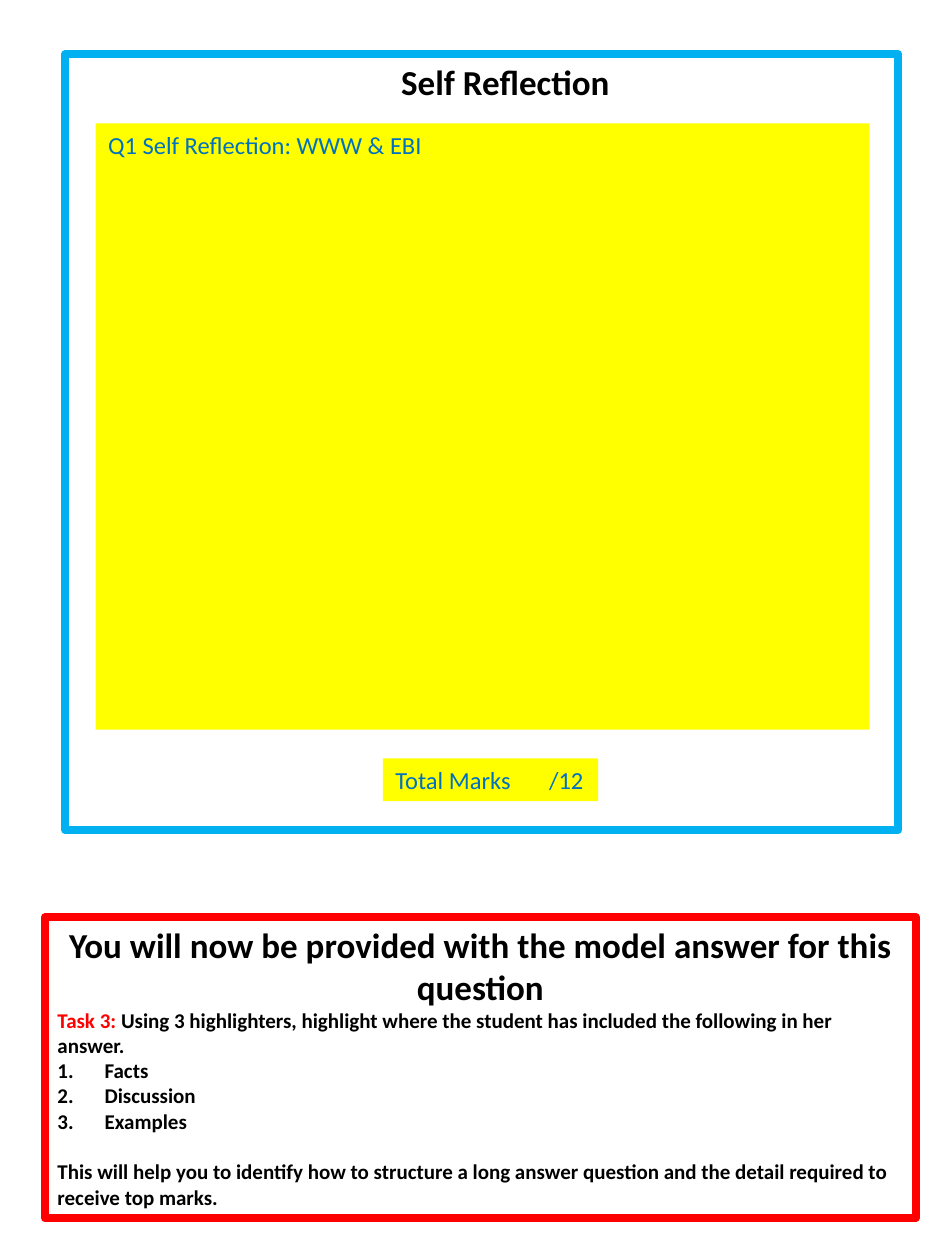
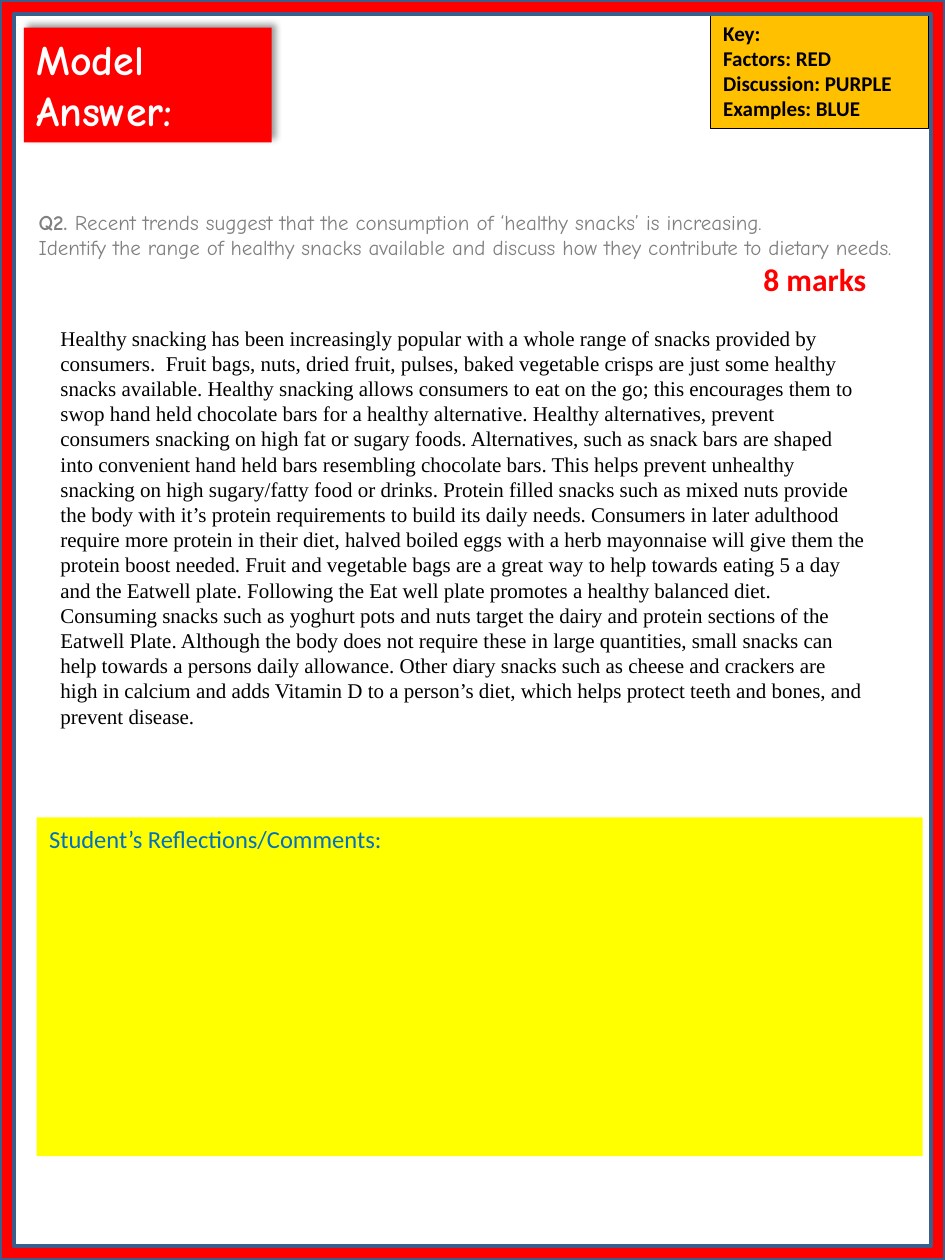
"""Build a self-reflection page and a model-answer page for a student workbook."""
from lxml.etree import SubElement
from pptx import Presentation
from pptx.dml.color import RGBColor
from pptx.enum.shapes import MSO_SHAPE as Shape
from pptx.enum.text import MSO_ANCHOR as Anchor, MSO_AUTO_SIZE as AutoSize, PP_ALIGN as Align
from pptx.oxml.ns import qn
from pptx.util import Cm, Pt

COLOURS = {
    "black": "000000", "white": "FFFFFF", "red": "FF0000", "yellow": "FFFF00",
    "amber": "FFC000", "sky": "00B0F0", "blue": "0070C0", "navy": "3A5F8C", "grey": "808080",
}

STYLES = {
    "title": {"name": "Calibri", "size": Pt(20), "bold": True, "color": "black"},
    "task": {"name": "Calibri", "size": Pt(12), "bold": True, "color": "black"},
    "task_label": {"name": "Calibri", "size": Pt(12), "bold": True, "color": "red"},
    "response": {"name": "Calibri", "size": Pt(14), "bold": False, "color": "blue"},
    "marks": {"name": "Calibri", "size": Pt(18), "bold": True, "color": "red"},
    "banner": {"name": "Comic Neue", "size": Pt(24), "bold": True, "color": "white"},
    "question": {"name": "Comic Neue", "size": Pt(12), "bold": False, "color": "grey"},
    "question_label": {"name": "Comic Neue", "size": Pt(12), "bold": True, "color": "grey"},
    "answer": {"name": "Times New Roman", "size": Pt(12), "bold": False, "color": "black"},
}

MODEL_ANSWER = (
    "Healthy snacking has been increasingly popular with a whole range of snacks provided by",
    "consumers.  Fruit bags, nuts, dried fruit, pulses, baked vegetable crisps are just some",
    "healthy snacks available. Healthy snacking allows consumers to eat on the go; this",
    "encourages them to swop hand held chocolate bars for a healthy alternative. Healthy",
    "alternatives, prevent consumers snacking on high fat or sugary foods. Alternatives, such as",
    "snack bars are shaped into convenient hand held bars resembling chocolate bars. This helps",
    "prevent unhealthy snacking on high sugary/fatty food or drinks. Protein filled snacks such",
    "as mixed nuts provide the body with it’s protein requirements to build its daily needs.",
    "Consumers in later adulthood require more protein in their diet, halved boiled eggs with a",
    "herb mayonnaise will give them the protein boost needed. Fruit and vegetable bags are a",
    "great way to help towards eating 5 a day and the Eatwell plate. Following the Eat well plate",
    "promotes a healthy balanced diet. Consuming snacks such as yoghurt pots and nuts target the",
    "dairy and protein sections of the Eatwell Plate. Although the body does not require these in",
    "large quantities, small snacks can help towards a persons daily allowance. Other diary",
    "snacks such as cheese and crackers are high in calcium and adds Vitamin D to a person’s",
    "diet, which helps protect teeth and bones, and prevent disease.",
)


def colour(name):
    """Return the named colour."""
    return RGBColor.from_string(COLOURS[name])


def paragraph(*spans, **layout):
    """Describe a paragraph by its (text, style) spans and its layout."""
    return spans, layout


def add_span(para, text, style):
    """Add a run of text in the named style."""
    span = para.add_run()
    span.text = text
    for name, value in STYLES[style].items():
        if name == "color":
            span.font.color.rgb = colour(value)
        else:
            setattr(span.font, name, value)


def number(para):
    """Give a paragraph an automatic number and a hanging indent."""
    properties = para._p.get_or_add_pPr()
    properties.set("marL", str(Cm(0.95)))
    properties.set("indent", str(-Cm(0.95)))
    SubElement(properties, qn("a:buAutoNum"), type="arabicPeriod")


def add_tab_stop(para, position):
    """Set a left tab stop in a paragraph."""
    stops = SubElement(para._p.get_or_add_pPr(), qn("a:tabLst"))
    SubElement(stops, qn("a:tab"), pos=str(position), algn="l")


def write(box, paragraphs):
    """Fill a box with wrapped paragraphs from its top."""
    frame = box.text_frame
    settings = {"word_wrap": True, "auto_size": AutoSize.NONE, "vertical_anchor": Anchor.TOP}
    for name, value in settings.items():
        setattr(frame, name, value)
    for index, (spans, layout) in enumerate(paragraphs):
        para = frame.add_paragraph() if index else frame.paragraphs[0]
        para.alignment = layout.get("align", Align.LEFT)
        para.space_before = layout.get("before", Pt(0))
        if layout.get("numbered"):
            number(para)
        if "tab" in layout:
            add_tab_stop(para, layout["tab"])
        for text, style in spans:
            add_span(para, text, style)


def add_panel(page, place, paragraphs=(), fill=None, line=None, width=4.5, kind=Shape.RECTANGLE):
    """Add a shape with optional fill, outline and text."""
    box = page.shapes.add_shape(kind, *map(Cm, place))
    box.shadow.inherit = False
    if fill:
        box.fill.solid()
        box.fill.fore_color.rgb = colour(fill)
    else:
        box.fill.background()
    if line:
        box.line.color.rgb = colour(line)
        box.line.width = Pt(width)
    else:
        box.line.fill.background()
    write(box, paragraphs)
    return box


def add_response(page, place, prompt, **layout):
    """Add a yellow area for the student to fill in."""
    add_panel(page, place, [paragraph((prompt, "response"), **layout)], fill="yellow")


def add_note(page, place, *paragraphs):
    """Add a plain text box."""
    write(page.shapes.add_textbox(*map(Cm, place)), paragraphs)


def cast_shadow(box):
    """Cast a soft shadow to the upper right of a box."""
    effects = box._element.spPr.find(qn("a:effectLst"))
    shadow = SubElement(effects, qn("a:outerShdw"), blurRad=str(Pt(4)), dist=str(Pt(3)),
                        dir=str(315 * 60000), algn="bl", rotWithShape="0")
    tint = SubElement(shadow, qn("a:srgbClr"), val=COLOURS["black"])
    SubElement(tint, qn("a:alpha"), val="40000")


def build_reflection(page):
    """Lay out the self-reflection page."""
    title = paragraph(("Self Reflection", "title"), align=Align.CENTER)
    frame = add_panel(page, (1.32, 1.09, 16.79, 15.65), [title], line="sky")
    frame.text_frame.margin_left = Cm(1.2)
    add_response(page, (1.93, 2.49, 15.6, 12.22), "Q1 Self Reflection: WWW & EBI")
    add_response(page, (7.72, 15.29, 4.34, 0.86), "Total Marks\t/12", tab=Cm(3.1))
    steps = [paragraph((step, "task"), numbered=True)
             for step in ("Facts", "Discussion", "Examples")]
    add_panel(page, (0.91, 18.49, 17.55, 6.07), [
        paragraph(("You will now be provided with the model answer for this question", "title"),
                  align=Align.CENTER),
        paragraph(("Task 3: ", "task_label"),
                  ("Using 3 highlighters, highlight where the student has included the "
                   "following in her answer.", "task")),
        *steps,
        paragraph(("This will help you to identify how to structure a long answer question and "
                   "the detail required to receive top marks.", "task"), before=Pt(14.6)),
    ], line="red")


def build_model_answer(page):
    """Lay out the model-answer page."""
    banner = add_panel(page, (0.48, 0.56, 5, 2.31),
                       [paragraph(("Model Answer:", "banner"))], fill="red")
    cast_shadow(banner)
    add_note(page, (0.53, 4.09, 18.34, 1.8),
             paragraph(("Q2. ", "question_label"),
                       ("Recent trends suggest that the consumption of ‘healthy snacks’ is "
                        "increasing.", "question")),
             paragraph(("Identify the range of healthy snacks available and discuss how they "
                        "contribute to dietary needs.", "question")))
    add_note(page, (15.14, 5.11, 3.23, 1.02), paragraph(("8 marks", "marks")))
    key = ("Key:", "Factors: RED", "Discussion: PURPLE", "Examples: BLUE")
    add_panel(page, (14.33, 0.28, 4.39, 2.31), [paragraph((entry, "task")) for entry in key],
              fill="amber", line="black", width=0.75)
    border = add_panel(page, (0, 0, 19.05, 25.4), fill="red", line="navy", width=2,
                       kind=Shape.FRAME)
    border.adjustments[0] = 0.015
    add_response(page, (0.74, 16.48, 17.86, 6.83), "Student’s Reflections/Comments:")
    add_note(page, (0.97, 6.43, 16.79, 8.46), paragraph((" ".join(MODEL_ANSWER), "answer")))


def main():
    """Build and save the deck."""
    deck = Presentation()
    deck.slide_width, deck.slide_height = Cm(19.05), Cm(25.4)
    for build in (build_reflection, build_model_answer):
        build(deck.slides.add_slide(deck.slide_layouts[6]))
    deck.save("out.pptx")


if __name__ == "__main__":
    main()
